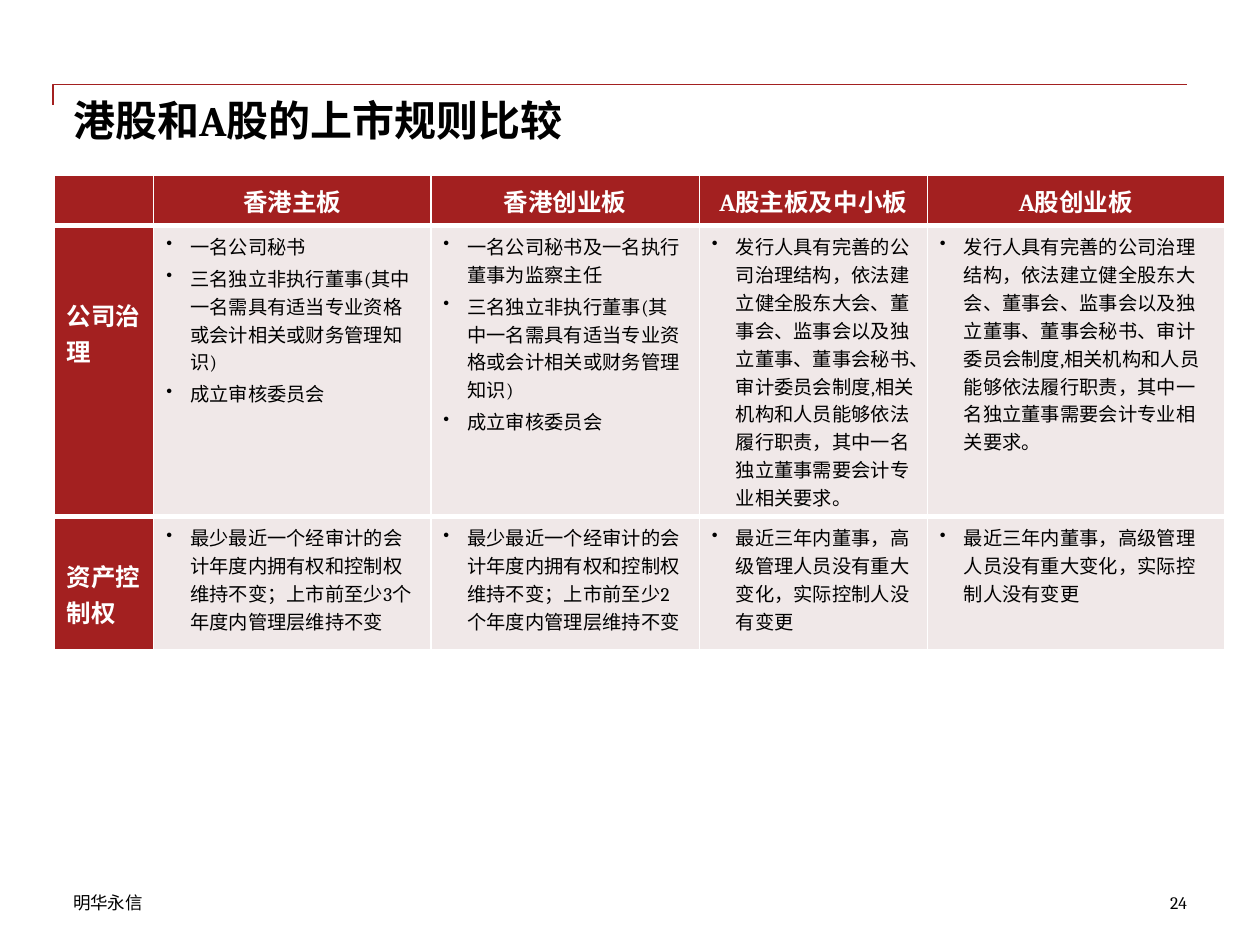
"""Build a slide that compares Hong Kong and A-share listing rules."""
from lxml import etree
from pptx import Presentation
from pptx.dml.color import RGBColor
from pptx.enum.text import MSO_ANCHOR, PP_ALIGN
from pptx.oxml.ns import qn
from pptx.util import Inches, Pt

LEFT, MID, RIGHT = PP_ALIGN.LEFT, PP_ALIGN.CENTER, PP_ALIGN.RIGHT
TOP, CENTER = MSO_ANCHOR.TOP, MSO_ANCHOR.MIDDLE
RED, PALE, WHITE, BLACK = "A32020", "F0E8E8", "FFFFFF", "000000"
HAN = "Noto Sans CJK SC"


def hue(code):
    """Turn a hex string into a colour."""
    return RGBColor.from_string(code)


def put(frame, *lines, size=10, color=BLACK, bold=False, align=LEFT,
        font="Cambria", after=0, bullet=False):
    """Write each line as a paragraph in the given format."""
    frame.word_wrap = True
    for i, line in enumerate(lines):
        para = frame.add_paragraph() if i else frame.paragraphs[0]
        para.alignment = align
        para.space_after = Pt(after)
        run = para.add_run()
        run.text = line
        run.font.size = Pt(size)
        run.font.bold = bold
        run.font.name = font
        run.font.color.rgb = hue(color)
        etree.SubElement(run.font._element, qn("a:ea"), typeface=HAN)
        if bullet:
            props = para._p.get_or_add_pPr()
            props.set("marL", str(Inches(0.19)))
            props.set("indent", str(Inches(-0.19)))
            etree.SubElement(props, qn("a:buSzPct"), val="90000")
            etree.SubElement(props, qn("a:buChar"), char="•")


deck = Presentation()
deck.slide_width, deck.slide_height = Inches(10), Inches(7.5)
slide = deck.slides.add_slide(deck.slide_layouts[5])
shapes = slide.shapes

title = shapes.title
title.left, title.top = Inches(0.58), Inches(0.75)
title.width, title.height = Inches(8.83), Inches(0.56)
foot = shapes.add_textbox(Inches(0.58), Inches(7.08), Inches(2.83), Inches(0.17))
page = shapes.add_textbox(Inches(7.75), Inches(7.08), Inches(1.67), Inches(0.17))
for box in (title, foot, page):
    frame = box.text_frame
    frame.margin_left = frame.margin_right = 0
    frame.margin_top = frame.margin_bottom = 0
    frame.vertical_anchor = TOP
put(title.text_frame, "港股和A股的上市规则比较", size=24, bold=True)
put(foot.text_frame, "明华永信", font=HAN)
put(page.text_frame, "24", align=RIGHT)

pen = shapes.build_freeform(Inches(0.42), Inches(0.83))
pen.add_line_segments([(Inches(0.42), Inches(0.67)),
                       (Inches(9.42), Inches(0.67))], close=False)
rule = pen.convert_to_shape()
rule.shadow.inherit = False
rule.fill.background()
rule.line.color.rgb = hue(RED)
rule.line.width = Pt(1)

heads = ["香港主板", "香港创业板", "A股主板及中小板", "A股创业板"]
board = ["三名独立非执行董事(其中一名需具有适当专业资格或会计相关或财务管理知识)",
         "成立审核委员会"]
duty = ["发行人具有完善的公司治理结构，依法建立健全股东大会、董事会、监事会以及"
        "独立董事、董事会秘书、审计委员会制度,相关机构和人员能够依法履行职责，"
        "其中一名独立董事需要会计专业相关要求。"]
hold = "最少最近一个经审计的会计年度内拥有权和控制权维持不变；上市前至少{}个年度内管理层维持不变"
keep = ["最近三年内董事，高级管理人员没有重大变化，实际控制人没有变更"]
rows = [
    ("公司治理", 0.57, [["一名公司秘书", *board],
                    ["一名公司秘书及一名执行董事为监察主任", *board], duty, duty]),
    ("资产控制权", 0.33, [[hold.format(3)], [hold.format(2)], keep, keep]),
]
wide = [0.79, 2.2, 2.13, 1.81, 2.36]
high = [0.39, 2.31, 1.06]

grid = shapes.add_table(len(high), len(wide), Inches(0.43), Inches(1.39),
                        Inches(sum(wide)), Inches(sum(high))).table
for col, size in zip(grid.columns, wide):
    col.width = Inches(size)
for row, size in zip(grid.rows, high):
    row.height = Inches(size)
for r in range(len(high)):
    for c in range(len(wide)):
        cell = grid.cell(r, c)
        props = cell._tc.get_or_add_tcPr()
        if r < 2:
            edge = etree.SubElement(props, qn("a:lnT" if r else "a:lnB"), w=str(Pt(3)))
            paint = etree.SubElement(edge, qn("a:solidFill"))
            etree.SubElement(paint, qn("a:srgbClr"), val=WHITE)
        cell.fill.solid()
        cell.fill.fore_color.rgb = hue(PALE if r and c else RED)

for c, head in enumerate(heads, 1):
    cell = grid.cell(0, c)
    cell.vertical_anchor = CENTER
    put(cell.text_frame, head, size=14, color=WHITE, bold=True, align=MID, after=2.8)
for r, (label, drop, items) in enumerate(rows, 1):
    cell = grid.cell(r, 0)
    cell.margin_top = Inches(drop)
    put(cell.text_frame, label, size=14, color=WHITE, bold=True, after=2.8)
    for c, lines in enumerate(items, 1):
        put(grid.cell(r, c).text_frame, *lines, size=11, after=2.2, bullet=True)

deck.save("out.pptx")
